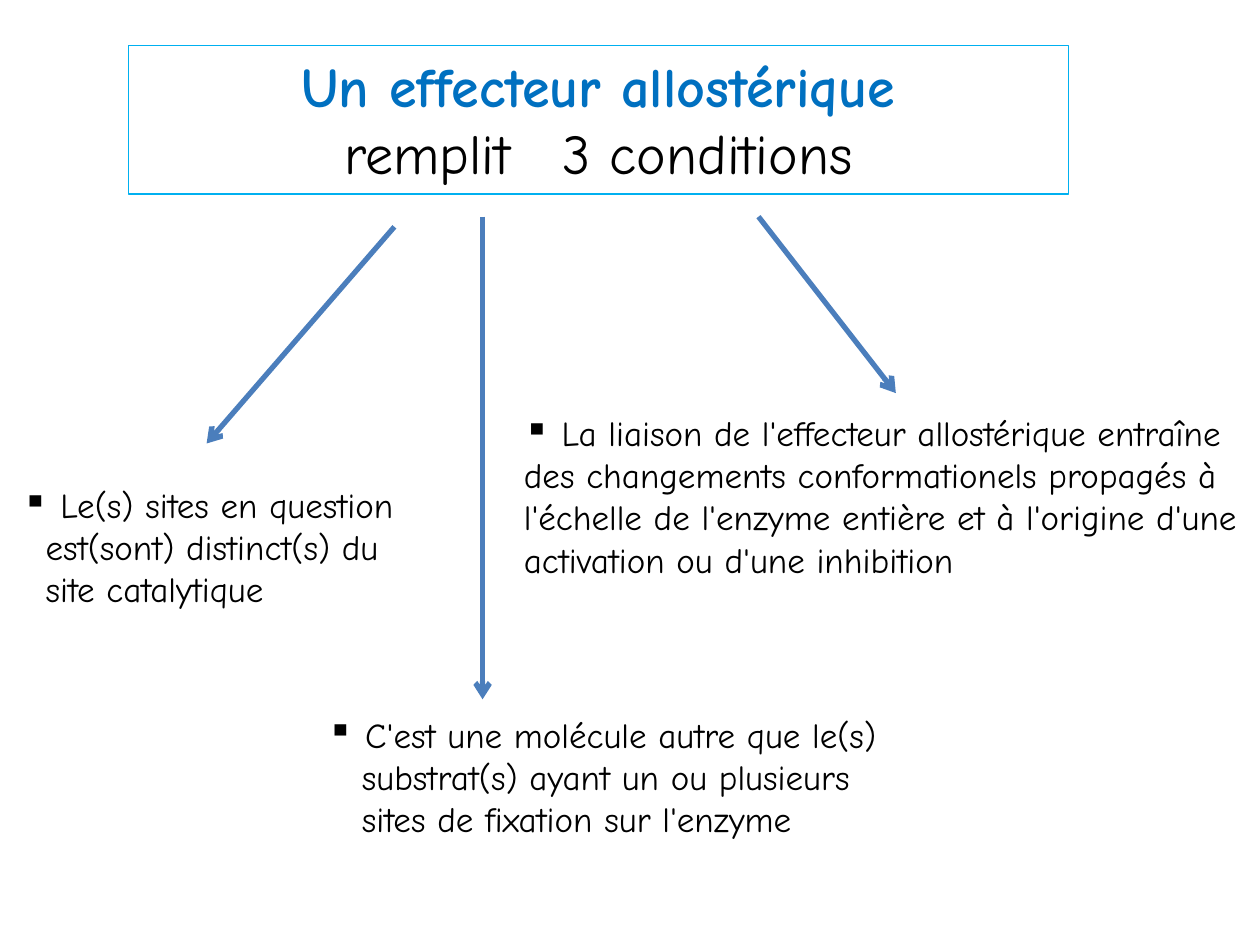
import pptx
import pptx.dml.color
import pptx.enum.shapes
import pptx.enum.text
import pptx.oxml
import pptx.oxml.ns
import pptx.util
from pptx.util import Pt

RGBColor = pptx.dml.color.RGBColor
BLACK = RGBColor(0x00, 0x00, 0x00)
WHITE = RGBColor(0xFF, 0xFF, 0xFF)
TITLE_BLUE = RGBColor(0x00, 0x70, 0xC0)
FRAME_BLUE = RGBColor(0x00, 0xB0, 0xF0)
ARROW_BLUE = RGBColor(0x4B, 0x7E, 0xBC)

TITLE_FORMAT = {"name": "Comic Neue", "size": Pt(32)}
BODY_FORMAT = {"name": "Comic Neue", "size": Pt(20), "bold": False}

# Box (left, top, width, height), lines, indent of the lines after the bullet, fill
CONDITIONS = [
    ((5.76, 272.88, 253.44, 79.92),
     ["Le(s) sites en question", "est(sont) distinct(s) du", "site catalytique"],
     13.25, WHITE),
    ((292.32, 231.84, 427.68, 128.16),
     ["La liaison de l'effecteur allostérique entraîne des changements "
      "conformationels propagés à l'échelle de l'enzyme entière et à l'origine "
      "d'une activation ou d'une inhibition"],
     0, None),
    ((180, 403.92, 360, 79.92),
     ["C'est une molécule autre que le(s)", "substrat(s) ayant un ou plusieurs",
      "sites de fixation sur l'enzyme"],
     19.75, None),
]

ARROWS = [
    ((225.36, 129.6), (118.08, 253.44)),
    ((433.44, 123.84), (511.92, 224.64)),
    ((275.76, 123.84), (275.76, 399.6)),
]


def add_xml(parent, tag, **attributes):
    element = pptx.oxml.parse_xml(f'<a:{tag} {pptx.oxml.ns.nsdecls("a")}/>')
    for name, value in attributes.items():
        element.set(name, value)
    parent.append(element)


def add_run(paragraph, text, formats, color):
    run = paragraph.add_run()
    run.text = text
    for name, value in formats.items():
        setattr(run.font, name, value)
    run.font.color.rgb = color
    return run


def set_up_frame(shape):
    frame = shape.text_frame
    frame.word_wrap = True
    frame.vertical_anchor = pptx.enum.text.MSO_ANCHOR.TOP
    return frame


def place_title(slide, box):
    shape = slide.shapes.add_shape(
        pptx.enum.shapes.MSO_SHAPE.RECTANGLE, *map(Pt, box))
    shape.shadow.inherit = False
    shape.fill.background()
    shape.line.color.rgb = FRAME_BLUE
    shape.line.width = Pt(0.75)
    frame = set_up_frame(shape)
    name_line = frame.paragraphs[0]
    count_line = frame.add_paragraph()
    for paragraph in (name_line, count_line):
        paragraph.alignment = pptx.enum.text.PP_ALIGN.CENTER
    add_run(name_line, "Un effecteur allostérique", {**TITLE_FORMAT, "bold": True}, TITLE_BLUE)
    plain = {**TITLE_FORMAT, "bold": False}
    add_run(count_line, "remplit", plain, BLACK)
    gap = add_run(count_line, " ", plain, BLACK)
    gap.font._element.set("spc", "1900")
    add_run(count_line, "3 conditions", plain, BLACK)


def place_condition(slide, box, lines, indent, fill):
    """Set the first line with a bullet and indent the lines that follow."""
    shape = slide.shapes.add_textbox(*map(Pt, box))
    if fill is not None:
        shape.fill.solid()
        shape.fill.fore_color.rgb = fill
    frame = set_up_frame(shape)
    for index, line in enumerate(lines):
        paragraph = frame.add_paragraph() if index else frame.paragraphs[0]
        properties = paragraph._p.get_or_add_pPr()
        if index:
            properties.set("marL", str(Pt(indent)))
        else:
            add_xml(properties, "buChar", char="▪")
            line = " " + line
        add_run(paragraph, line, BODY_FORMAT, BLACK)


def place_arrow(slide, start, end):
    connector = slide.shapes.add_connector(
        pptx.enum.shapes.MSO_CONNECTOR.STRAIGHT, *map(Pt, start + end))
    connector.line.color.rgb = ARROW_BLUE
    connector.line.width = Pt(3)
    add_xml(connector.line._get_or_add_ln(), "tailEnd", type="arrow")
    add_xml(connector._element.spPr, "effectLst")


def main():
    presentation = pptx.Presentation()
    presentation.slide_width = Pt(720)
    presentation.slide_height = Pt(540)
    slide = presentation.slides.add_slide(presentation.slide_layouts[6])
    place_title(slide, (73.44, 25.92, 537.12, 84.96))
    for condition in CONDITIONS:
        place_condition(slide, *condition)
    for start, end in ARROWS:
        place_arrow(slide, start, end)
    presentation.save("out.pptx")


if __name__ == "__main__":
    main()
